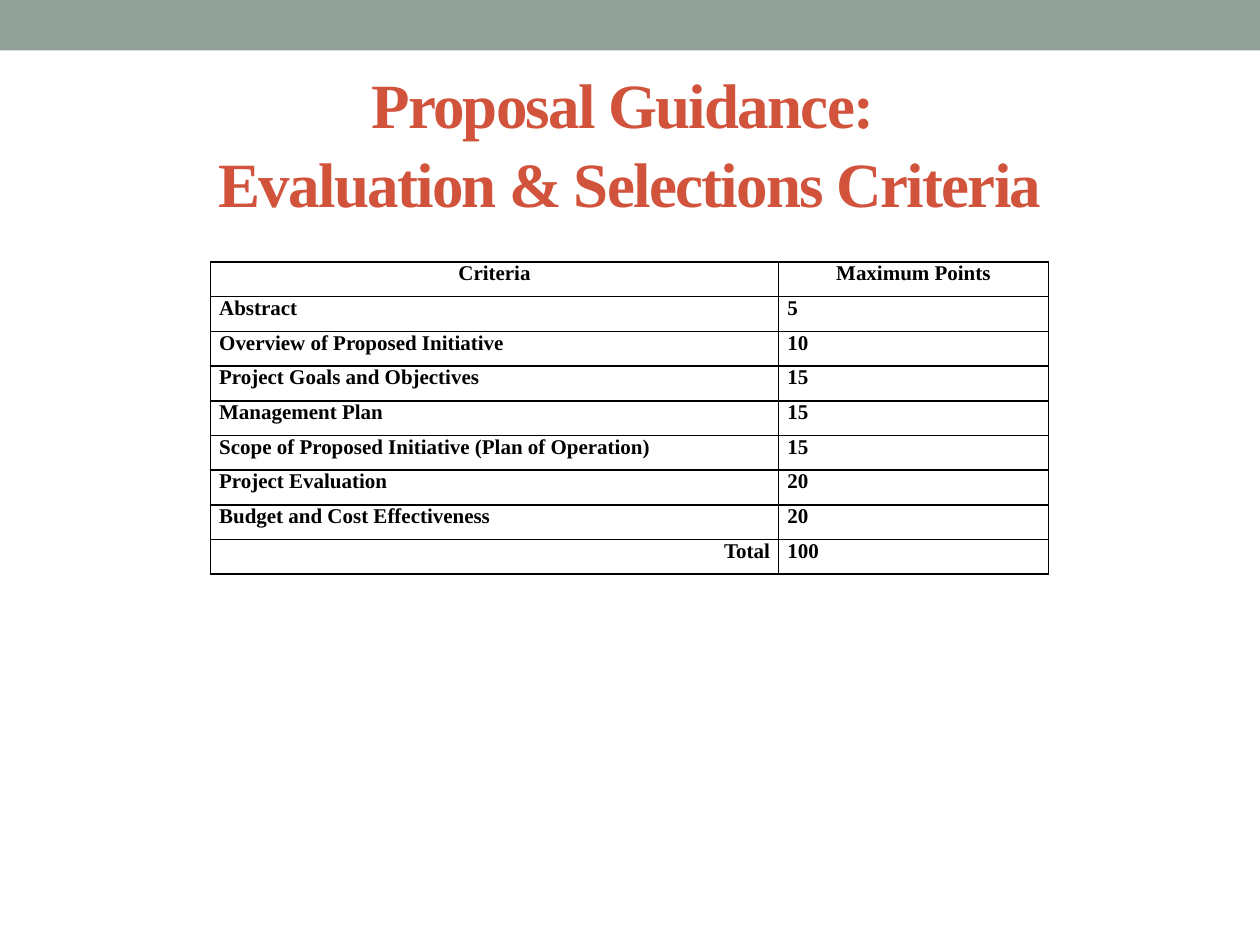
from lxml.etree import SubElement
from pptx import Presentation
from pptx.dml.color import RGBColor
from pptx.enum.shapes import MSO_SHAPE
from pptx.enum.text import MSO_ANCHOR, PP_ALIGN
from pptx.oxml.ns import qn
from pptx.util import Inches, Pt

# Content
TITLE_LINES = ["Proposal Guidance: ", "Evaluation & Selections Criteria"]
HEADER = ("Criteria", "Maximum Points")
CRITERIA = [
    ("Abstract", 5),
    ("Overview of Proposed Initiative", 10),
    ("Project Goals and Objectives", 15),
    ("Management Plan", 15),
    ("Scope of Proposed Initiative (Plan of Operation)", 15),
    ("Project Evaluation", 20),
    ("Budget and Cost Effectiveness", 20),
]
TOTAL = ("Total", sum(points for _, points in CRITERIA))

# Style
FONT = "Times New Roman"
SAGE = RGBColor(0x93, 0xA2, 0x99)
RUST = RGBColor(0xD2, 0x53, 0x3C)
BLACK = RGBColor(0, 0, 0)
COLUMN_WIDTHS = (4.51, 2.14)
TABLE_HEIGHT = 2.48


def add_span(para, text, size, color):
    span = para.add_run()
    span.text = text
    span.font.name = FONT
    span.font.size = Pt(size)
    span.font.bold = True
    span.font.color.rgb = color
    return span


def add_borders(cell, color, width):
    properties = cell._tc.get_or_add_tcPr()
    for side in ("a:lnL", "a:lnR", "a:lnT", "a:lnB"):
        line = SubElement(properties, qn(side), w=str(Pt(width)))
        fill = SubElement(line, qn("a:solidFill"))
        SubElement(fill, qn("a:srgbClr"), val=str(color))


def fill_cell(cell, text, alignment):
    add_borders(cell, BLACK, 1)
    cell.fill.background()
    cell.margin_left = cell.margin_right = Inches(0.07)
    cell.margin_top = cell.margin_bottom = 0
    para = cell.text_frame.paragraphs[0]
    para.alignment = alignment
    add_span(para, text, 12, BLACK)


deck = Presentation()
deck.slide_width, deck.slide_height = Inches(10), Inches(7.5)
page = deck.slides.add_slide(deck.slide_layouts[5])

# Top band
band = page.shapes.add_shape(MSO_SHAPE.RECTANGLE, 0, 0, deck.slide_width, Inches(0.4))
band.shadow.inherit = False
band.fill.solid()
band.fill.fore_color.rgb = SAGE
band.line.fill.background()

# Title
title = page.shapes.title
title.left, title.top = Inches(0.5), Inches(0.58)
title.width, title.height = Inches(9), Inches(1.08)
title.text_frame.vertical_anchor = MSO_ANCHOR.MIDDLE
title_para = title.text_frame.paragraphs[0]
title_para.alignment = PP_ALIGN.CENTER
title_para.line_spacing = 1.04
for index, text in enumerate(TITLE_LINES):
    if index:
        title_para.add_line_break()
    span = add_span(title_para, text, 36, RUST)
    span.font._element.set("spc", "-100")

# Criteria table
rows = [HEADER, *CRITERIA, TOTAL]
table = page.shapes.add_table(
    len(rows), len(HEADER), Inches(1.67), Inches(2.08),
    Inches(sum(COLUMN_WIDTHS)), Inches(TABLE_HEIGHT),
).table
table.first_row = table.horz_banding = False
for column, width in zip(table.columns, COLUMN_WIDTHS):
    column.width = Inches(width)
for row_index, row in enumerate(rows):
    table.rows[row_index].height = Inches(TABLE_HEIGHT / len(rows))
    for column_index, value in enumerate(row):
        if row is HEADER:
            alignment = PP_ALIGN.CENTER
        elif row is TOTAL and column_index == 0:
            alignment = PP_ALIGN.RIGHT
        else:
            alignment = PP_ALIGN.LEFT
        fill_cell(table.cell(row_index, column_index), str(value), alignment)

deck.save("out.pptx")
